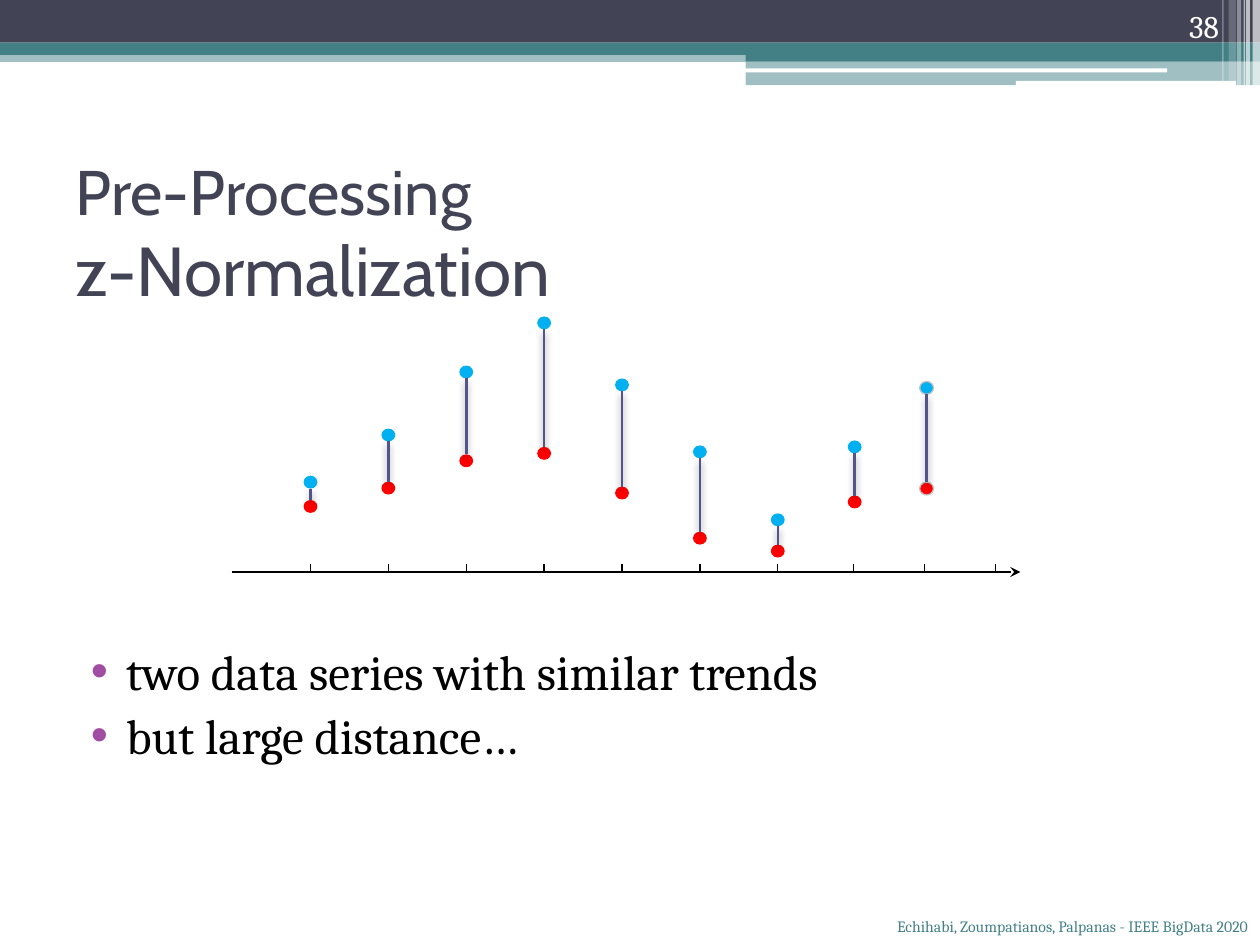
"""Build the z-normalization slide: header bands, paired data series and two bullets."""
from dataclasses import dataclass
from typing import NamedTuple

from lxml import etree
from pptx import Presentation
from pptx.dml.color import RGBColor
from pptx.enum import shapes, text
from pptx.oxml import ns
from pptx.util import Cm, Pt


@dataclass(frozen=True)
class Theme:
    dark: str = "424456"
    teal: str = "438086"
    white: str = "FFFFFF"
    black: str = "000000"
    bullet: str = "A04DA3"
    link: str = "53548A"
    high: str = "00B0F0"
    low: str = "FF0000"
    outline: str = "C2C2C2"
    heading: str = "Cabin"
    serif: str = "Cambria"
    title_size: float = 36
    subtitle_size: float = 39.6
    body_size: float = 28
    page_size: float = 18
    footer_size: float = 9


class Box(NamedTuple):
    x: float
    y: float
    w: float
    h: float


class Band(NamedTuple):
    box: Box
    color: str
    alpha: int = 100
    shape: shapes.MSO_SHAPE = shapes.MSO_SHAPE.RECTANGLE


class Sample(NamedTuple):
    x: float
    high: float
    low: float
    outlined: bool = False


T = Theme()
ROUND = shapes.MSO_SHAPE.ROUNDED_RECTANGLE
BANDS = [
    Band(Box(0, 1.02, 25.4, 0.23), T.teal, 50),
    Band(Box(0, 0, 25.4, 0.86), T.dark),
    Band(Box(0, 0.86, 25.4, 0.25), T.teal),
    Band(Box(15.03, 0.99, 10.37, 0.24), T.teal),
    Band(Box(15.03, 1.23, 10.37, 0.49), T.teal, 50),
    Band(Box(15.02, 1.38, 8.51, 0.08), T.white, shape=ROUND),
    Band(Box(20.48, 1.63, 4.44, 0.1), T.white, shape=ROUND),
    Band(Box(25.25, 0, 0.15, 1.73), T.white, 65),
    Band(Box(25.12, 0, 0.08, 1.73), T.white, 65),
    Band(Box(25.07, 0, 0.03, 1.73), T.white, 60),
    Band(Box(24.94, 0, 0.08, 1.73), T.white, 40),
    Band(Box(24.77, 0, 0.15, 1.63), T.white, 20),
    Band(Box(24.64, 0, 0.03, 1.63), T.white, 30),
]
AXIS_Y, TICK = 11.53, 0.15
DOT_W, DOT_H = 0.28, 0.26
GRID = [6.26 + 1.57 * i for i in range(7)]
TICKS = GRID + [17.2, 18.63, 20.07]
HIGHS = [9.72, 8.77, 7.5, 6.51, 7.76, 9.11, 10.48]
LOWS = [10.21, 9.84, 9.29, 9.14, 9.94, 10.85, 11.11]
SAMPLES = [Sample(*values) for values in zip(GRID, HIGHS, LOWS)] + [
    Sample(17.23, 9.01, 10.12),
    Sample(18.68, 7.82, 9.85, outlined=True),
]


def rgb(color: str) -> RGBColor:
    """Turn a hex colour into an RGBColor."""
    return RGBColor.from_string(color)


def child(parent, tag: str, **attributes: str):
    """Append a DrawingML element."""
    return etree.SubElement(parent, ns.qn(tag), attributes)


def place(sp, box: Box) -> None:
    """Move and size a shape."""
    sp.left, sp.top, sp.width, sp.height = (Cm(v) for v in box)


def style(font, size: float, color: str, name: str) -> None:
    """Format a font."""
    font.size, font.name = Pt(size), name
    font.color.rgb = rgb(color)


def add_fill(slide, kind: shapes.MSO_SHAPE, box: Box, color: str):
    """Add a plain filled shape without a line."""
    sp = slide.shapes.add_shape(kind, *(Cm(v) for v in box))
    sp.shadow.inherit = False
    sp.fill.solid()
    sp.fill.fore_color.rgb = rgb(color)
    sp.line.fill.background()
    return sp


def add_band(slide, band: Band) -> None:
    """Add one header band, translucent if asked."""
    sp = add_fill(slide, band.shape, band.box, band.color)
    if band.alpha < 100:
        color = sp.fill._xPr.find(".//" + ns.qn("a:srgbClr"))
        child(color, "a:alpha", val=str(band.alpha * 1000))


def add_line(slide, x1: float, y1: float, x2: float, y2: float, color: str,
             width: float, shadow: bool = False, arrow: bool = False) -> None:
    """Add a straight line with optional shadow and arrowhead."""
    line = slide.shapes.add_connector(
        shapes.MSO_CONNECTOR.STRAIGHT, Cm(x1), Cm(y1), Cm(x2), Cm(y2))
    line.line.color.rgb = rgb(color)
    line.line.width = Pt(width)
    if arrow:
        child(line.line._get_or_add_ln(), "a:tailEnd", type="stealth")
    effects = child(line._element.spPr, "a:effectLst")
    if shadow:
        outer = child(effects, "a:outerShdw", blurRad=str(Pt(4.1)),
                      dist=str(Pt(2)), dir="5400000", rotWithShape="0")
        child(child(outer, "a:srgbClr", val=T.black), "a:alpha", val="40000")


def add_dot(slide, x: float, y: float, color: str, outlined: bool) -> None:
    """Add a data point centred on x, y."""
    box = Box(x - DOT_W / 2, y - DOT_H / 2, DOT_W, DOT_H)
    sp = add_fill(slide, shapes.MSO_SHAPE.OVAL, box, color)
    if outlined:
        sp.line.color.rgb = rgb(T.outline)
        sp.line.width = Pt(0.75)


def add_chart_drawing(slide) -> None:
    """Draw the axis and the two linked series."""
    add_line(slide, 4.67, AXIS_Y, 20.57, AXIS_Y, T.black, 0.75, arrow=True)
    for x in TICKS:
        add_line(slide, x, AXIS_Y, x, AXIS_Y - TICK, T.black, 0.75)
    for s in SAMPLES:
        add_dot(slide, s.x, s.low, T.low, s.outlined)
        add_dot(slide, s.x, s.high, T.high, s.outlined)
        add_line(slide, s.x, s.high + DOT_H / 2, s.x, s.low - DOT_H / 2,
                 T.link, 1.5, shadow=True)


def add_label(slide, box: Box, label: str, size: float, color: str,
              anchor: text.MSO_ANCHOR) -> None:
    """Add a right-aligned line of text."""
    tf = slide.shapes.add_textbox(*(Cm(v) for v in box)).text_frame
    tf.word_wrap, tf.vertical_anchor = True, anchor
    p = tf.paragraphs[0]
    p.text, p.alignment = label, text.PP_ALIGN.RIGHT
    style(p.font, size, color, T.serif)


def fill_title(sp) -> None:
    """Write the two-line title."""
    place(sp, Box(1.27, 3.18, 22.86, 2.97))
    sp.text_frame.vertical_anchor = text.MSO_ANCHOR.MIDDLE
    p = sp.text_frame.paragraphs[0]
    p.alignment = text.PP_ALIGN.LEFT
    lines = [("Pre-Processing", T.title_size), ("z-Normalization", T.subtitle_size)]
    for i, (line, size) in enumerate(lines):
        if i:
            p.add_line_break()
        r = p.add_run()
        r.text = line
        style(r.font, size, T.dark, T.heading)


def fill_body(sp, items: list[str]) -> None:
    """Write the bullet list."""
    place(sp, Box(1.27, 12.8, 22.86, 5.46))
    tf = sp.text_frame
    for i, item in enumerate(items):
        p = tf.add_paragraph() if i else tf.paragraphs[0]
        p.text, p.space_before = item, Pt(3 if i else 0)
        pPr = p._p.get_or_add_pPr()
        pPr.set("marL", str(Cm(1.02)))
        pPr.set("indent", str(Cm(-0.71)))
        child(child(pPr, "a:buClr"), "a:srgbClr", val=T.bullet)
        child(pPr, "a:buFont", typeface="Arial")
        child(pPr, "a:buChar", char="•")
        style(p.font, T.body_size, T.black, T.serif)


def main() -> None:
    """Build and save the slide."""
    prs = Presentation()
    prs.slide_width, prs.slide_height = Cm(25.4), Cm(19.05)
    slide = prs.slides.add_slide(prs.slide_layouts[1])
    for band in BANDS:
        add_band(slide, band)
    fill_title(slide.shapes.title)
    fill_body(slide.placeholders[1],
              ["two data series with similar trends", "but large distance…"])
    add_label(slide, Box(22.71, 0, 2.11, 1.02), "38", T.page_size, T.white,
              text.MSO_ANCHOR.BOTTOM)
    add_chart_drawing(slide)
    add_label(slide, Box(12.32, 18.36, 13.08, 0.69),
              "Echihabi, Zoumpatianos, Palpanas - IEEE BigData 2020",
              T.footer_size, T.teal, text.MSO_ANCHOR.TOP)
    prs.save("out.pptx")


if __name__ == "__main__":
    main()
